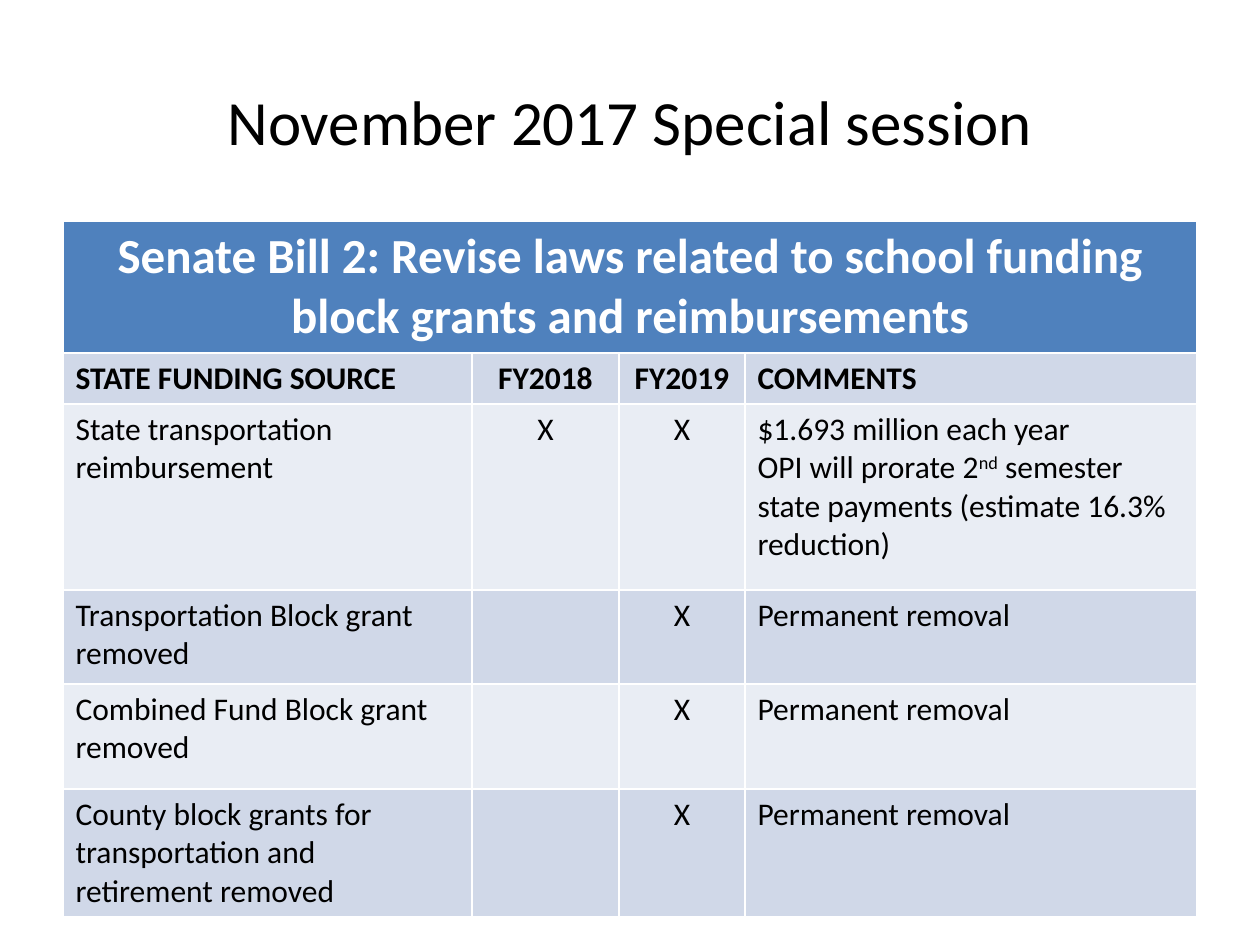
"""Build the November 2017 special session slide with its funding table."""
from pptx import Presentation
from pptx.dml.color import RGBColor
from pptx.enum.text import MSO_ANCHOR, PP_ALIGN
from pptx.util import Pt

TITLE = "November 2017 Special session"
BILL = "Senate Bill 2: Revise laws related to school funding block grants and reimbursements"
HEADS = ["STATE FUNDING SOURCE", "FY2018", "FY2019", "COMMENTS"]
GONE = "Permanent removal"
NOTE = [
    ["$1.693 million each year"],
    ["OPI will prorate 2", ("nd", 30000),
     " semester state payments (estimate 16.3% reduction)"],
]
GRANTS = [
    ["State transportation reimbursement", "X", "X", NOTE],
    ["Transportation Block grant removed", "", "X", GONE],
    ["Combined Fund Block grant removed", "", "X", GONE],
    ["County block grants for transportation and retirement removed", "", "X", GONE],
]
COLORS = {"head": "4F81BD", "dark": "D0D8E8", "light": "E9EDF4",
          "white": "FFFFFF", "black": "000000"}
FONT = "Calibri"
WIDTHS = [409, 147, 126, 452]
HEIGHTS = [132, 51, 186, 94, 105, 128]
LEFT, TOP = 63, 221


def px(n):
    return round(n * 914400 / 126)


def color(name):
    return RGBColor.from_string(COLORS[name])


def write(frame, text, size, ink="black", bold=False, align=PP_ALIGN.LEFT):
    lines = [[text]] if isinstance(text, str) else text
    for i, line in enumerate(lines):
        para = frame.add_paragraph() if i else frame.paragraphs[0]
        para.alignment = align
        para.font.size = Pt(size)
        for part in filter(None, line):
            words, lift = (part, 0) if isinstance(part, str) else part
            run = para.add_run()
            run.text = words
            run.font.name, run.font.size, run.font.bold = FONT, Pt(size), bold
            run.font.color.rgb = color(ink)
            if lift:
                run.font._element.set("baseline", str(lift))


def paint(cell, name):
    cell.fill.solid()
    cell.fill.fore_color.rgb = color(name)


def add_title(slide):
    box = slide.shapes.add_textbox(px(LEFT), px(42), px(sum(WIDTHS)), px(157))
    frame = box.text_frame
    frame.word_wrap = True
    frame.vertical_anchor = MSO_ANCHOR.MIDDLE
    write(frame, TITLE, 36, align=PP_ALIGN.CENTER)


def add_grid(slide):
    grid = slide.shapes.add_table(
        len(HEIGHTS), len(WIDTHS), px(LEFT), px(TOP),
        px(sum(WIDTHS)), px(sum(HEIGHTS))).table
    for col, width in zip(grid.columns, WIDTHS):
        col.width = px(width)
    for row, height in zip(grid.rows, HEIGHTS):
        row.height = px(height)

    bill = grid.cell(0, 0)
    bill.merge(grid.cell(0, len(WIDTHS) - 1))
    paint(bill, "head")
    write(bill.text_frame, BILL, 28, "white", True, PP_ALIGN.CENTER)

    for r, row in enumerate([HEADS] + GRANTS, 1):
        for c, text in enumerate(row):
            cell = grid.cell(r, c)
            paint(cell, "dark" if r % 2 else "light")
            align = PP_ALIGN.CENTER if c in (1, 2) else PP_ALIGN.LEFT
            write(cell.text_frame, text, 18, bold=r == 1, align=align)


def main():
    deck = Presentation()
    deck.slide_width, deck.slide_height = px(1260), px(945)
    slide = deck.slides.add_slide(deck.slide_layouts[6])
    add_title(slide)
    add_grid(slide)
    deck.save("out.pptx")


if __name__ == "__main__":
    main()
